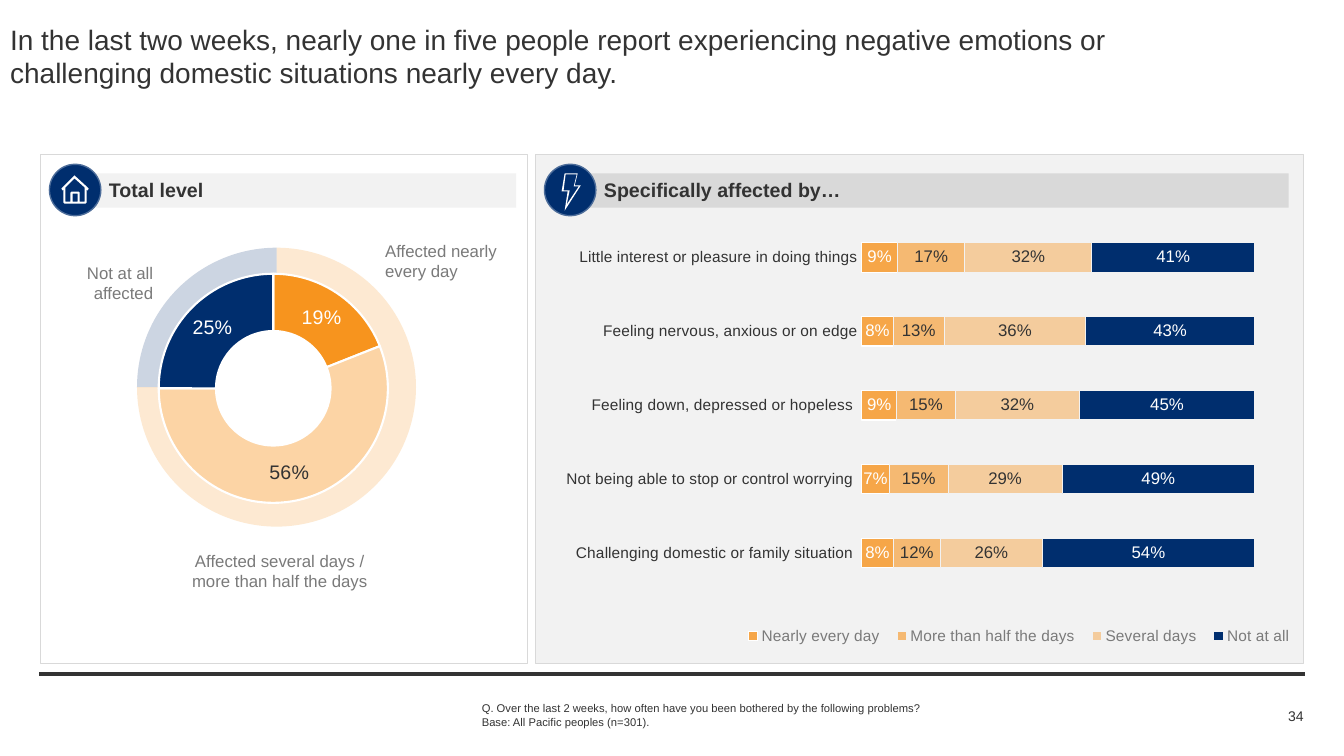
from dataclasses import dataclass

from pptx import Presentation
from pptx import util as u
from pptx.chart.data import CategoryChartData
from pptx.dml.color import RGBColor
from pptx.enum import chart as charts, shapes, text
from pptx.oxml import parse_xml
from pptx.oxml.ns import nsdecls, qn


@dataclass(frozen=True)
class Theme:
    font: str = "Arial"
    ink: str = "333333"
    muted: str = "7A7A7A"
    white: str = "FFFFFF"
    panel: str = "F2F2F2"
    border: str = "D9D9D9"
    navy: str = "002E6E"
    navy_edge: str = "4C6C99"
    orange: str = "F7941E"
    peach: str = "FCD4A5"
    title: float = 20
    heading: float = 14
    label: float = 12
    axis: float = 11
    small: float = 10
    note: float = 8


def apply(target, values):
    for name, value in values.items():
        setattr(target, name, value)


class SlideBuilder:
    def __init__(self, slide, theme):
        self.slide, self.theme = slide, theme

    def style(self, font, size, color, bold=False):
        apply(font, {"name": self.theme.font, "size": u.Pt(size), "bold": bold})
        font.color.rgb = RGBColor.from_string(color)

    def paint(self, target, fill=None, line=None, width=0.75, alpha=None):
        if fill:
            target.fill.solid()
            target.fill.fore_color.rgb = RGBColor.from_string(fill)
            if alpha:
                color = target.fill._xPr.find(".//" + qn("a:srgbClr"))
                color.append(parse_xml(f'<a:alpha {nsdecls("a")} val="{alpha * 1000}"/>'))
        else:
            target.fill.background()
        if line:
            target.line.color.rgb = RGBColor.from_string(line)
            target.line.width = u.Pt(width)
        else:
            target.line.fill.background()

    def set_text(self, shape, content, size, color, align="LEFT", bold=False,
                 inset=0.0, wrap=True, anchor="TOP"):
        frame = shape.text_frame
        side, edge = u.Inches(inset), u.Inches(inset / 2)
        apply(frame, {
            "text": content, "word_wrap": wrap,
            "auto_size": text.MSO_AUTO_SIZE.NONE,
            "vertical_anchor": text.MSO_ANCHOR[anchor],
            "margin_left": side, "margin_right": side,
            "margin_top": edge, "margin_bottom": edge,
        })
        for paragraph in frame.paragraphs:
            paragraph.alignment = text.PP_ALIGN[align]
            for run in paragraph.runs:
                self.style(run.font, size, color, bold)

    def title(self, box, content):
        heading = self.slide.shapes.title
        apply(heading, dict(zip(("left", "top", "width", "height"), map(u.Inches, box))))
        self.set_text(heading, content, self.theme.title, self.theme.ink)

    def text(self, box, content, size, color, **options):
        self.set_text(self.slide.shapes.add_textbox(*map(u.Inches, box)),
                      content, size, color, **options)

    def shape(self, kind, box, **look):
        shape = self.slide.shapes.add_shape(shapes.MSO_SHAPE[kind], *map(u.Inches, box))
        shape.shadow.inherit = False
        self.paint(shape, **look)

    def rule(self, x1, x2, y):
        line = self.slide.shapes.add_connector(
            shapes.MSO_CONNECTOR.STRAIGHT, *map(u.Inches, (x1, y, x2, y)))
        line.line.color.rgb = RGBColor.from_string(self.theme.ink)
        line.line.width = u.Pt(3)
        line.element.spPr.append(parse_xml(f'<a:effectLst {nsdecls("a")}/>'))

    def icon(self, contours):
        """Contours are in hundredths of an inch; inner ones cut holes."""
        outer, *holes = contours
        builder = self.slide.shapes.build_freeform(*outer[0], scale=u.Inches(0.01))
        builder.add_line_segments(outer[1:], close=True)
        for hole in holes:
            builder.move_to(*hole[0])
            builder.add_line_segments(hole[1:], close=True)
        shape = builder.convert_to_shape()
        shape.shadow.inherit = False
        self.paint(shape, fill=self.theme.white)

    def place(self, parent, index, box, inner=True):
        for old in parent.findall(qn("c:layout")):
            parent.remove(old)
        target = '<c:layoutTarget val="inner"/>' if inner else ""
        modes = "".join(f'<c:{side}Mode val="edge"/>' for side in "xy")
        sizes = "".join(f'<c:{key} val="{value}"/>' for key, value in zip("xywh", box))
        parent.insert(index, parse_xml(
            f'<c:layout {nsdecls("c")}><c:manualLayout>{target}{modes}{sizes}'
            '</c:manualLayout></c:layout>'))

    def chart(self, kind, box, plot_box, categories, series):
        data = CategoryChartData(number_format="0%")
        data.categories = categories
        for name, values in series:
            data.add_series(name, values)
        chart = self.slide.shapes.add_chart(
            charts.XL_CHART_TYPE[kind], *map(u.Inches, box), data).chart
        apply(chart, {"has_title": False, "has_legend": False})
        self.style(chart.font, self.theme.small, self.theme.ink)
        self.place(chart.element.find(".//" + qn("c:plotArea")), 0, plot_box)
        return chart

    def labels(self, series, size, color):
        labels = series.data_labels
        apply(labels, {"show_value": True, "number_format": "0%",
                       "number_format_is_linked": False})
        self.style(labels.font, size, color)

    def doughnut(self, box, plot_box, values, looks, hole=50):
        chart = self.chart("DOUGHNUT", box, plot_box, ["1", "2", "3"], [("Series 1", values)])
        chart.plots[0].vary_by_categories = False
        chart.element.find(".//" + qn("c:holeSize")).set("val", str(hole))
        ring = chart.plots[0].series[0]
        for index, look in looks.items():
            self.paint(ring.points[index].format, **look)
        return ring

    def stacked_bars(self, box, plot_box, legend_box, categories, series):
        t = self.theme
        chart = self.chart("BAR_STACKED_100", box, plot_box, categories,
                           [(name, values) for name, values, *_ in series])
        plot = chart.plots[0]
        apply(plot, {"gap_width": 150, "overlap": 100, "vary_by_categories": False})
        for bar, (_, _, look, label_color) in zip(plot.series, series):
            self.paint(bar.format, **look)
            self.labels(bar, t.label, label_color)
        none = charts.XL_TICK_MARK.NONE
        apply(chart.category_axis, {"reverse_order": True, "major_tick_mark": none,
                                    "minor_tick_mark": none})
        chart.category_axis.format.line.fill.background()
        self.style(chart.category_axis.tick_labels.font, t.axis, t.ink)
        apply(chart.value_axis, {"visible": False, "has_major_gridlines": False})
        chart.has_legend = True
        apply(chart.legend, {"position": charts.XL_LEGEND_POSITION.BOTTOM,
                             "include_in_layout": False})
        self.style(chart.legend.font, t.axis, t.muted)
        self.place(chart.element.find(".//" + qn("c:legend")), 1, legend_box, inner=False)


def main():
    deck = Presentation()
    deck.slide_width, deck.slide_height = u.Inches(13.33), u.Inches(7.5)
    t = Theme()
    page = SlideBuilder(deck.slides.add_slide(deck.slide_layouts[5]), t)

    # Title, rule and question
    page.rule(0.39, 12.94, 6.69)
    page.title((0.1, 0.22, 11.15, 0.44),
               "In the last two weeks, nearly one in five people report experiencing "
               "negative emotions or challenging domestic situations nearly every day.")
    page.text((4.68, 6.91, 7.48, 0.37),
              "Q. Over the last 2 weeks, how often have you been bothered by the following "
              "problems?\nBase: All Pacific peoples (n=301).", t.note, t.ink, inset=0.1)

    # Outer ring and panels
    page.doughnut((0.92, 2.25, 3.92, 3.46), (0.11, 0.06, 0.71, 0.8), (0.75, None, 0.25),
                  {0: {"fill": t.orange, "alpha": 20}, 2: {"fill": t.navy, "alpha": 20}})
    page.shape("RECTANGLE", (0.4, 1.53, 4.83, 5.05), line=t.border)
    page.shape("RECTANGLE", (5.31, 1.53, 7.62, 5.05), fill=t.panel, line=t.border)

    # Problems by frequency
    problems = ["Little interest or pleasure in doing things",
                "Feeling nervous, anxious or on edge",
                "Feeling down, depressed or hopeless ",
                "Not being able to stop or control worrying ",
                "Challenging domestic or family situation "]
    frequencies = [
        ("Nearly every day", (0.09, 0.08, 0.09, 0.07, 0.08),
         {"fill": t.orange, "alpha": 80, "line": t.white}, t.white),
        ("More than half the days", (0.17, 0.13, 0.15, 0.15, 0.12),
         {"fill": t.orange, "alpha": 60, "line": t.panel}, t.ink),
        ("Several days", (0.32, 0.36, 0.32, 0.29, 0.26),
         {"fill": t.orange, "alpha": 40, "line": t.panel}, t.ink),
        ("Not at all", (0.41, 0.43, 0.45, 0.49, 0.54),
         {"fill": t.navy, "line": t.panel}, t.white),
    ]
    page.stacked_bars((5.12, 2.05, 7.79, 4.53), (0.44, 0.03, 0.5, 0.81),
                      (0.28, 0.9, 0.72, 0.08), problems, frequencies)

    # Ring captions
    for box, caption, align in (
            ((3.82, 2.39, 1.12, 0.4), "Affected nearly every day", "LEFT"),
            ((1.83, 5.46, 1.89, 0.4), "Affected several days / more than half the days", "CENTER"),
            ((0.4, 2.61, 1.12, 0.4), "Not at all affected", "RIGHT")):
        page.text(box, caption, t.label, t.muted, align=align)

    # Panel headings with icons
    house = [[(86, 185), (75, 175), (74, 174), (63, 185), (61, 187), (62, 189), (63, 188),
              (63, 201), (64, 202), (85, 202), (86, 201), (86, 188), (87, 189), (88, 187)],
             [(72, 200), (72, 192), (77, 192), (77, 200)],
             [(84, 200), (79, 200), (79, 191), (78, 190), (71, 190), (70, 191), (70, 200),
              (65, 200), (65, 186), (74, 177), (84, 186)]]
    bolt = [[(560, 209), (563, 190), (557, 190), (560, 172), (573, 172), (570, 184), (576, 184)],
            [(559, 189), (565, 189), (562, 203), (574, 185), (569, 185), (572, 173), (561, 173)]]
    for left, width, fill, heading, icon in (
            (0.49, 4.56, t.panel, "Total level", house),
            (5.4, 7.31, t.border, "Specifically affected by…", bolt)):
        page.shape("RECTANGLE", (left + 0.07, 1.72, width, 0.34), fill=fill)
        page.shape("OVAL", (left, 1.63, 0.51, 0.51), fill=t.navy, line=t.navy_edge, width=1)
        page.text((left + 0.59, 1.77, 2.36, 0.24), heading, t.heading, t.ink,
                  bold=True, wrap=False)
        page.icon(icon)

    # Inner ring
    levels = page.doughnut(
        (0.79, 2.4, 3.92, 3.46), (0.2, 0.09, 0.58, 0.66), (0.19, 0.56, 0.25),
        {index: {"fill": fill, "line": t.white, "width": 1.5}
         for index, fill in enumerate((t.orange, t.peach, t.navy))}, hole=65)
    page.labels(levels, t.heading, t.white)
    page.style(levels.points[1].data_label.font, t.heading, t.ink)

    # Page number
    page.text((11.87, 6.99, 1.06, 0.22), "34", t.small, t.ink, align="RIGHT", anchor="MIDDLE")
    deck.save("out.pptx")


if __name__ == "__main__":
    main()
